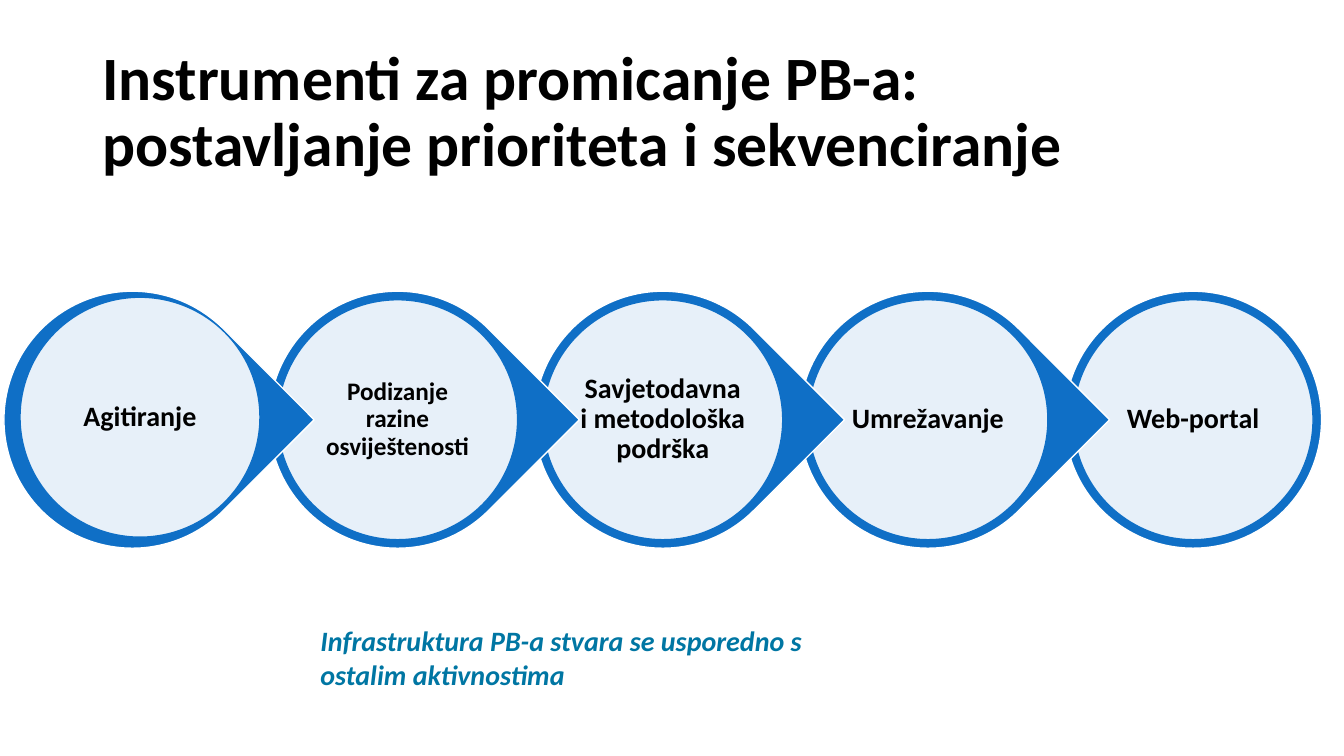
from dataclasses import dataclass

from lxml.etree import SubElement
from pptx import Presentation
from pptx.dml.color import RGBColor
from pptx.enum.shapes import MSO_SHAPE
from pptx.enum.text import MSO_ANCHOR, PP_ALIGN
from pptx.oxml.ns import qn
from pptx.util import Pt

TITLE = "Instrumenti za promicanje PB-a: postavljanje prioriteta i sekvenciranje"
CAPTION = "Infrastruktura PB-a stvara se usporedno s ostalim aktivnostima"
STEPS = [
    ("Agitiranje", 20),
    ("Podizanje razine osviještenosti", 18),
    ("Savjetodavna i metodološka podrška", 20),
    ("Umrežavanje", 20),
    ("Web-portal", 20),
]


@dataclass(frozen=True)
class Theme:
    font: str = "Calibri"
    ink: str = "000000"
    paper: str = "FFFFFF"
    blue: str = "0F6FC6"
    teal: str = "0076A3"
    title_size: int = 44
    caption_size: int = 20


THEME = Theme()
CHAIN_LEFT, CHAIN_TOP, PITCH = 2.8, 208, 189.4
RING, DISC, LABEL = 183.6, 171.4, 122.4
FIRST_DISC = (11.5, 4.3)


def write(shape, text, size, color, italic=False):
    """Write one bold run in the first paragraph and return the paragraph."""
    shape.text_frame.word_wrap = True
    para = shape.text_frame.paragraphs[0]
    span = para.add_run()
    span.text = text
    font = span.font
    font.name, font.size = THEME.font, Pt(size)
    font.bold, font.italic = True, italic
    font.color.rgb = RGBColor.from_string(color)
    return para


def add_round(page, kind, left, top, size, fill, line):
    """Add a filled shape with equal sides and a one-point outline."""
    shape = page.shapes.add_shape(kind, Pt(left), Pt(top), Pt(size), Pt(size))
    shape.shadow.inherit = False
    shape.fill.solid()
    shape.fill.fore_color.rgb = RGBColor.from_string(fill)
    shape.line.color.rgb = RGBColor.from_string(line)
    shape.line.width = Pt(1)
    return shape


def add_step(page, index, text, size):
    """Add a ring pointing at the next step, its pale disc and its label."""
    left = CHAIN_LEFT + index * PITCH
    last = index == len(STEPS) - 1
    kind = MSO_SHAPE.OVAL if last else MSO_SHAPE.TEAR
    ring = add_round(page, kind, left, CHAIN_TOP, RING, THEME.blue, THEME.paper)
    ring.rotation = 0 if last else 45

    inset = (RING - DISC) / 2
    shift_x, shift_y = (inset, inset) if index else FIRST_DISC
    disc_left, disc_top = left + shift_x, CHAIN_TOP + shift_y
    disc = add_round(page, MSO_SHAPE.OVAL, disc_left, disc_top, DISC,
                     THEME.paper, THEME.blue)
    color = disc.fill._xPr.find(".//" + qn("a:srgbClr"))
    SubElement(color, qn("a:alpha")).set("val", "90000")

    gap = (DISC - LABEL) / 2
    box = page.shapes.add_textbox(Pt(disc_left + gap), Pt(disc_top + gap),
                                  Pt(LABEL), Pt(LABEL))
    frame = box.text_frame
    frame.vertical_anchor = MSO_ANCHOR.MIDDLE
    frame.margin_left = frame.margin_right = Pt(2)
    frame.margin_top = frame.margin_bottom = Pt(2)
    para = write(box, text, size, THEME.ink)
    para.alignment, para.line_spacing = PP_ALIGN.CENTER, 0.9


def main():
    """Build and save the slide."""
    deck = Presentation()
    deck.slide_width, deck.slide_height = Pt(960), Pt(540)
    page = deck.slides.add_slide(deck.slide_layouts[5])

    title = page.shapes.title
    title.left, title.top = Pt(66), Pt(28.8)
    title.width, title.height = Pt(828), Pt(104.4)
    title.text_frame.vertical_anchor = MSO_ANCHOR.MIDDLE
    para = write(title, TITLE, THEME.title_size, THEME.ink)
    para.alignment, para.line_spacing = PP_ALIGN.LEFT, 0.9

    for index, (text, size) in reversed(list(enumerate(STEPS))):
        add_step(page, index, text, size)

    caption = page.shapes.add_textbox(Pt(203.8), Pt(442), Pt(397.4), Pt(31.7))
    para = write(caption, CAPTION, THEME.caption_size, THEME.teal, italic=True)
    para._p.get_or_add_pPr().set("marL", str(Pt(18)))

    deck.save("out.pptx")


if __name__ == "__main__":
    main()
